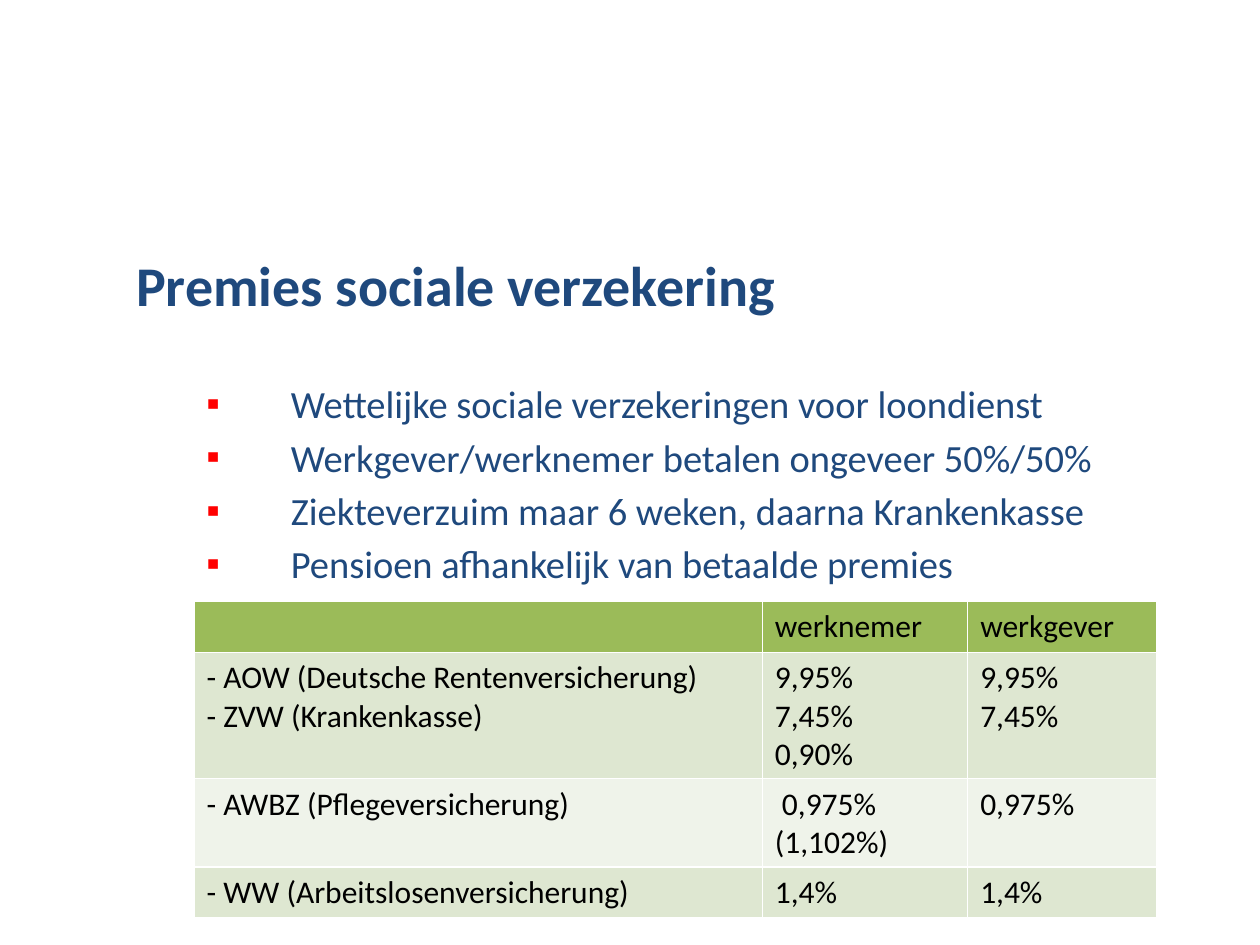
import pptx
import pptx.dml.color
import pptx.enum.text
import pptx.oxml
import pptx.oxml.ns
import pptx.util

Inches = pptx.util.Inches
Pt = pptx.util.Pt
RGBColor = pptx.dml.color.RGBColor

NAVY = RGBColor(0x1F, 0x49, 0x7D)
BLACK = RGBColor(0, 0, 0)
GREEN = RGBColor(0x9B, 0xBB, 0x59)
BANDS = (RGBColor(0xDE, 0xE7, 0xD1), RGBColor(0xEF, 0xF3, 0xEA))
FONT = "Calibri"

TITLE = "Premies sociale verzekering"
BULLETS = [
    "Wettelijke sociale verzekeringen voor loondienst",
    "Werkgever/werknemer betalen ongeveer 50%/50%",
    "Ziekteverzuim maar 6 weken, daarna Krankenkasse",
    "Pensioen afhankelijk van betaalde premies",
]
PREMIUMS = [
    ("", "werknemer", "werkgever"),
    ("- AOW (Deutsche Rentenversicherung)\n- ZVW (Krankenkasse)",
     "9,95%\n7,45%\n0,90%", "9,95%\n7,45%"),
    ("- AWBZ (Pflegeversicherung)", " 0,975%\n(1,102%)", "0,975%"),
    ("- WW (Arbeitslosenversicherung)", "1,4%", "1,4%"),
]
COLUMN_WIDTHS = (4.51, 1.63, 1.5)
ROW_HEIGHTS = (0.41, 1.0, 0.7, 0.4)
BULLET_XML = (
    '<a:buClr {ns}><a:srgbClr val="FF0000"/></a:buClr>',
    '<a:buFont {ns} typeface="Arial"/>',
    '<a:buChar {ns} char="▪"/>',
)


def style(paragraph, size, color, bold=False):
    for run in paragraph.runs:
        run.font.name = FONT
        run.font.size = Pt(size)
        run.font.bold = bold
        run.font.color.rgb = color


def add_bullet(paragraph, indent):
    properties = paragraph._p.get_or_add_pPr()
    properties.set("marL", str(indent))
    properties.set("indent", str(-indent))
    for xml in BULLET_XML:
        namespace = pptx.oxml.ns.nsdecls("a")
        properties.append(pptx.oxml.parse_xml(xml.format(ns=namespace)))


def add_title(slide):
    title = slide.shapes.title
    title.left, title.top = Inches(0.98), Inches(1.94)
    title.width, title.height = Inches(8.15), Inches(0.64)
    frame = title.text_frame
    frame.text = TITLE
    frame.auto_size = pptx.enum.text.MSO_AUTO_SIZE.NONE
    frame.vertical_anchor = pptx.enum.text.MSO_ANCHOR.TOP
    frame.paragraphs[0].alignment = pptx.enum.text.PP_ALIGN.LEFT
    style(frame.paragraphs[0], 32, NAVY, bold=True)


def add_bullets(slide):
    box = slide.shapes.add_textbox(Inches(1.54), Inches(2.97), Inches(7.72), Inches(1.8))
    frame = box.text_frame
    frame.word_wrap = True
    frame.text = "\n".join(BULLETS)
    for index, paragraph in enumerate(frame.paragraphs):
        add_bullet(paragraph, Inches(0.67))
        paragraph.space_before = Pt(4 if index else 0)
        style(paragraph, 22, NAVY)


def add_premium_table(slide):
    table = slide.shapes.add_table(
        len(PREMIUMS), len(COLUMN_WIDTHS), Inches(1.54), Inches(4.77),
        Inches(sum(COLUMN_WIDTHS)), Inches(sum(ROW_HEIGHTS))).table
    for column, width in zip(table.columns, COLUMN_WIDTHS):
        column.width = Inches(width)
    for index, (row, height, texts) in enumerate(zip(table.rows, ROW_HEIGHTS, PREMIUMS)):
        row.height = Inches(height)
        for cell, text in zip(row.cells, texts):
            cell.text = text
            cell.fill.solid()
            cell.fill.fore_color.rgb = BANDS[(index - 1) % 2] if index else GREEN
            for paragraph in cell.text_frame.paragraphs:
                style(paragraph, 18, BLACK)


def main():
    presentation = pptx.Presentation()
    presentation.slide_width, presentation.slide_height = Inches(10), Inches(7.5)
    slide = presentation.slides.add_slide(presentation.slide_layouts[5])
    add_title(slide)
    add_bullets(slide)
    add_premium_table(slide)
    presentation.save("out.pptx")


if __name__ == "__main__":
    main()
